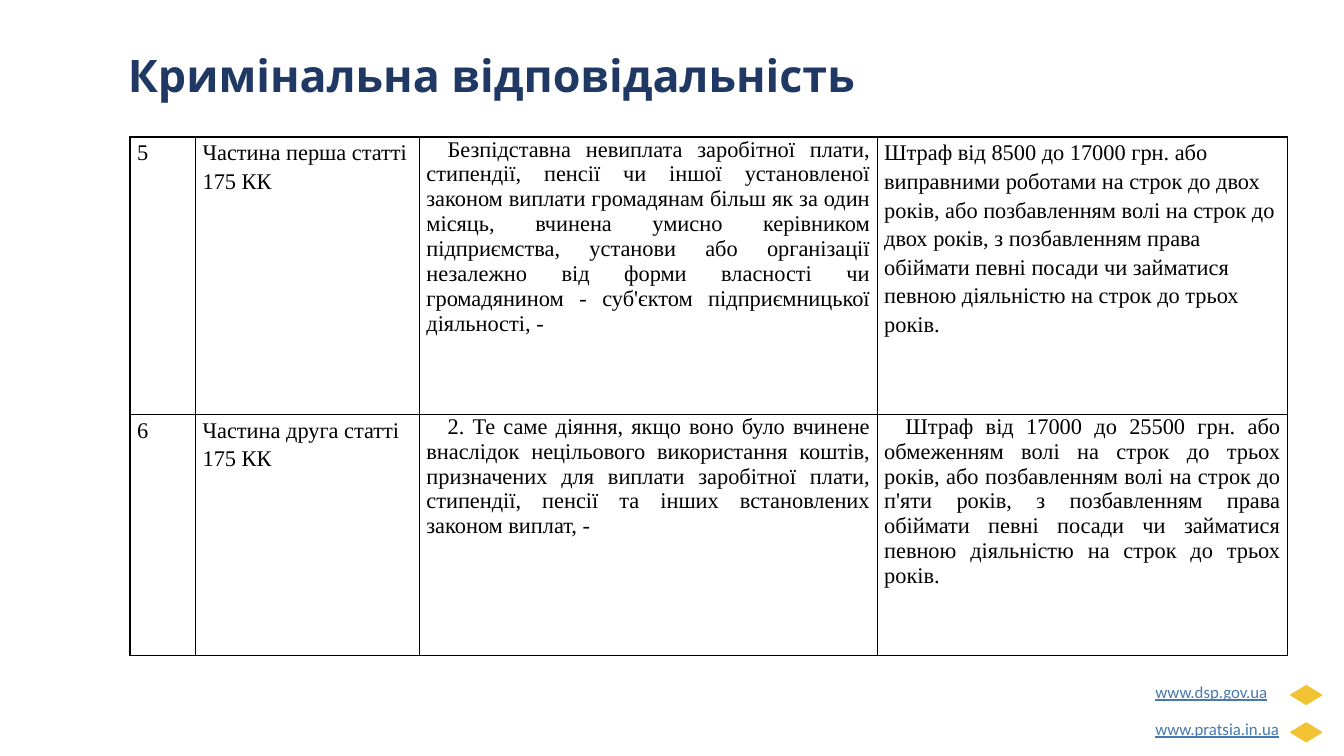
from lxml import etree
from pptx import Presentation
from pptx.dml.color import RGBColor
from pptx.enum.shapes import MSO_SHAPE
from pptx.enum.text import PP_ALIGN
from pptx.oxml.ns import qn
from pptx.util import Inches, Pt

DIAMOND = MSO_SHAPE.FLOWCHART_DECISION
JUSTIFY = PP_ALIGN.JUSTIFY
LEFT = PP_ALIGN.LEFT

TITLE = "Кримінальна відповідальність"
SITES = [("www.dsp.gov.ua", 1.55), ("www.pratsia.in.ua", 1.74)]
ARTICLES = [
    [
        ("5", LEFT),
        ("Частина перша статті 175 КК", LEFT),
        ("Безпідставна невиплата заробітної плати, стипендії, пенсії чи іншої "
         "установленої законом виплати громадянам більш як за один місяць, вчинена "
         "умисно керівником підприємства, установи або організації незалежно від "
         "форми власності чи громадянином - суб'єктом підприємницької діяльності, -",
         JUSTIFY),
        ("Штраф від 8500 до 17000 грн. або виправними роботами на строк до двох "
         "років, або позбавленням волі на строк до двох років, з позбавленням права "
         "обіймати певні посади чи займатися певною діяльністю на строк до трьох років.",
         LEFT),
    ],
    [
        ("6", LEFT),
        ("Частина друга статті 175 КК", LEFT),
        ("2. Те саме діяння, якщо воно було вчинене внаслідок нецільового "
         "використання коштів, призначених для виплати заробітної плати, стипендії, "
         "пенсії та інших встановлених законом виплат, -", JUSTIFY),
        ("Штраф від 17000 до 25500 грн. або обмеженням волі на строк до трьох років, "
         "або позбавленням волі на строк до п'яти років, з позбавленням права "
         "обіймати певні посади чи займатися певною діяльністю на строк до трьох років.",
         JUSTIFY),
    ],
]
COLUMN_WIDTHS = [0.65, 2.22, 4.54, 4.07]
ROW_HEIGHTS = [2.75, 2.39]
SITE_STEP = 0.37

THEME = {
    "title": ("Open Sans", 32, "203864"),
    "cell": ("Times New Roman", 16, "000000"),
    "site": ("Calibri", 12, "4778AE"),
    "diamond": "F1C232",
    "border": "000000",
}


def style(paragraph, role, bold=False, underline=False):
    name, size, color = THEME[role]
    for run in paragraph.runs:
        run.font.name = name
        run.font.size = Pt(size)
        run.font.bold = bold
        run.font.underline = underline
        run.font.color.rgb = RGBColor.from_string(color)


def add_label(slide, box, text, role, margins=None, **emphasis):
    label = slide.shapes.add_textbox(*map(Inches, box))
    frame = label.text_frame
    frame.word_wrap = True
    if margins is not None:
        frame.margin_left = frame.margin_right = Inches(margins)
        frame.margin_top = frame.margin_bottom = Inches(margins)
    frame.text = text
    style(frame.paragraphs[0], role, **emphasis)


def add_borders(cell):
    properties = cell._tc.get_or_add_tcPr()
    for position, side in enumerate(("a:lnL", "a:lnR", "a:lnT", "a:lnB")):
        line = etree.Element(qn(side), w=str(Pt(1)))
        fill = etree.SubElement(line, qn("a:solidFill"))
        etree.SubElement(fill, qn("a:srgbClr"), val=THEME["border"])
        properties.insert(position, line)


def fill_cell(cell, text, alignment):
    cell.margin_left = cell.margin_right = Inches(0.07)
    cell.margin_top = cell.margin_bottom = 0
    cell.fill.background()
    add_borders(cell)
    cell.text_frame.text = text
    paragraph = cell.text_frame.paragraphs[0]
    paragraph.alignment = alignment
    if alignment == JUSTIFY:
        paragraph._p.get_or_add_pPr().set("indent", str(Inches(0.21)))
    else:
        paragraph.line_spacing = 1.15
    style(paragraph, "cell")


def add_articles(slide):
    box = (1.29, 1.36, sum(COLUMN_WIDTHS), sum(ROW_HEIGHTS))
    table = slide.shapes.add_table(
        len(ARTICLES), len(COLUMN_WIDTHS), *map(Inches, box)).table
    table.first_row = table.horz_banding = False
    for column, width in zip(table.columns, COLUMN_WIDTHS):
        column.width = Inches(width)
    for row, height, article in zip(table.rows, ROW_HEIGHTS, ARTICLES):
        row.height = Inches(height)
        for cell, (text, alignment) in zip(row.cells, article):
            fill_cell(cell, text, alignment)


def add_sites(slide):
    for index, (site, width) in enumerate(SITES):
        drop = index * SITE_STEP
        box = (12.8, 6.8 + drop, 0.31, 0.19)
        diamond = slide.shapes.add_shape(DIAMOND, *map(Inches, box))
        diamond.shadow.inherit = False
        diamond.fill.solid()
        diamond.fill.fore_color.rgb = RGBColor.from_string(THEME["diamond"])
        diamond.line.color.rgb = RGBColor.from_string(THEME["diamond"])
        diamond.line.width = Pt(0.75)
        add_label(slide, (11.33, 6.66 + drop, width, 0.47), site, "site",
                  margins=0.13, underline=True)


def main():
    deck = Presentation()
    deck.slide_width = Inches(13.33)
    deck.slide_height = Inches(7.5)
    slide = deck.slides.add_slide(deck.slide_layouts[6])
    add_sites(slide)
    add_label(slide, (1.17, 0.42, 9.96, 0.64), TITLE, "title", bold=True)
    add_articles(slide)
    deck.save("out.pptx")


if __name__ == "__main__":
    main()
